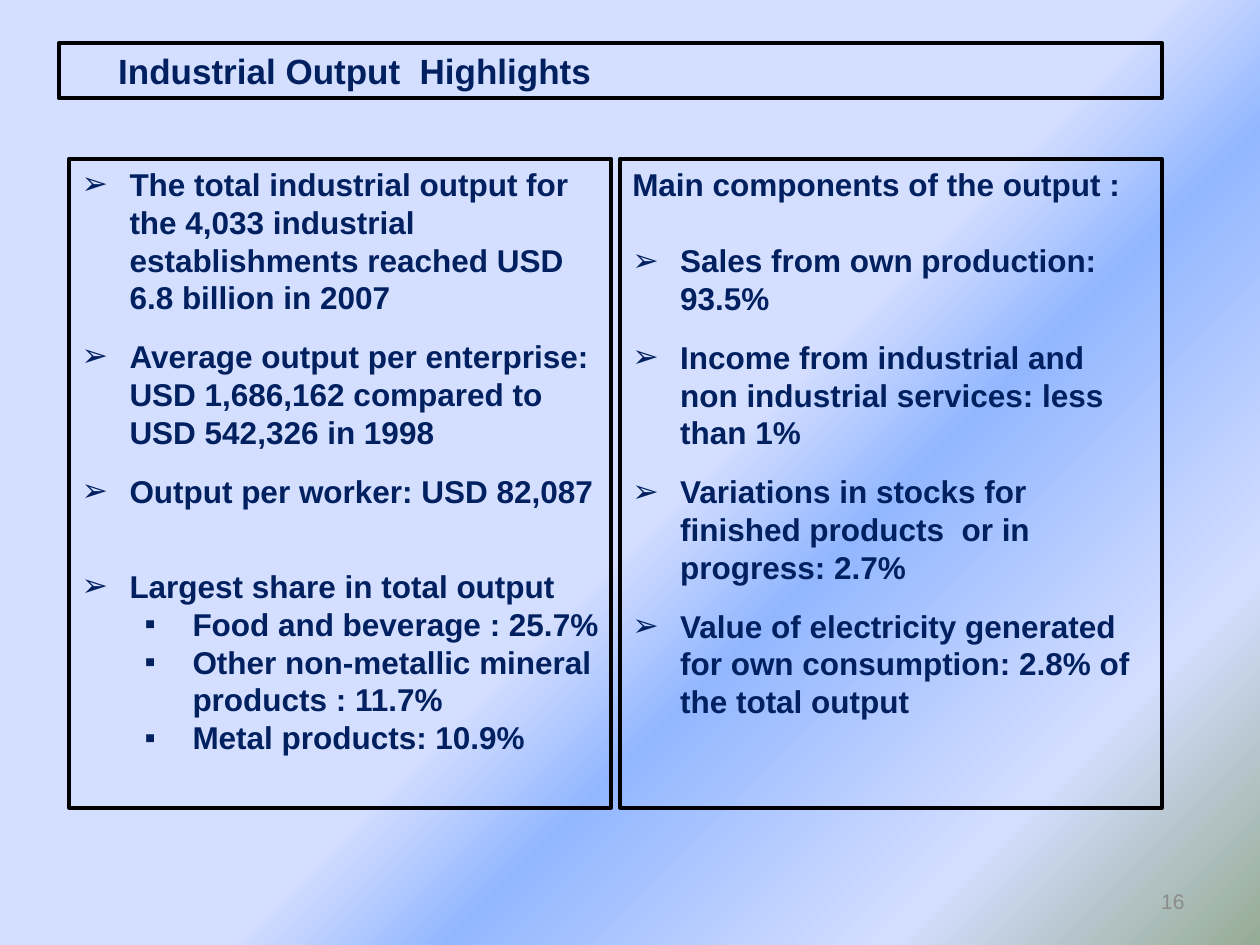
"""Build the slide of industrial output highlights."""
from copy import deepcopy
from dataclasses import dataclass

from lxml.etree import SubElement
from pptx import Presentation as Deck
from pptx.dml.color import RGBColor as Color
from pptx.enum.shapes import MSO_SHAPE as Shape
from pptx.enum.text import MSO_ANCHOR as Anchor, PP_ALIGN as Align
from pptx.oxml.ns import qn
from pptx.util import Inches, Pt


@dataclass(frozen=True)
class Theme:
    font: str = "Arial"
    navy: str = "002060"
    black: str = "000000"
    gray: str = "8C8C8C"
    title: int = 20
    body: int = 18
    small: int = 12
    edge: float = 2.25
    stops: tuple = ((53, "D4DEFF"), (63, "93B7FF"), (83, "D4DEFF"), (100, "96AB94"))


@dataclass(frozen=True)
class Line:
    text: str
    bullet: str = "➢"
    after: int = 12
    left: float = 0.38
    hang: float = 0.38
    level: int = 0


@dataclass(frozen=True)
class Box:
    left: float
    top: float
    width: float
    height: float
    size: int
    lines: tuple


THEME = Theme()


def sub(text: str) -> Line:
    return Line(text, "▪", 0, 0.88, level=1)


TITLE = Line("Industrial Output  Highlights", "", 0, 0.76, 0.39)
FACTS = (
    Line("The total industrial output for the 4,033 industrial establishments "
         "reached USD 6.8 billion in 2007"),
    Line("Average output per enterprise: USD 1,686,162 compared to  USD 542,326 in 1998"),
    Line("Output per worker: USD 82,087", after=33),
    Line("Largest share in total output", after=0),
    sub("Food and beverage : 25.7%"),
    sub("Other non-metallic mineral products : 11.7%"),
    sub("Metal products: 10.9%"),
)
PARTS = (
    Line("Main components of the output :", "", 22),
    Line("Sales from own production: 93.5%"),
    Line("Income from industrial and non industrial services: less than 1%"),
    Line("Variations in stocks for finished products  or in progress: 2.7%"),
    Line("Value of electricity generated for own consumption: 2.8% of the total output"),
)
BOXES = (
    Box(0.47, 0.34, 8.75, 0.44, THEME.title, (TITLE,)),
    Box(0.55, 1.26, 4.3, 5.15, THEME.body, FACTS),
    Box(4.92, 1.26, 4.3, 5.15, THEME.body, PARTS),
)


def style(para, size: int, color: str, bold: bool) -> None:
    for run in para.runs:
        font = run.font
        font.name, font.size, font.bold = THEME.font, Pt(size), bold
        font.color.rgb = Color.from_string(color)


def write(para, line: Line, size: int) -> None:
    para.text = line.text
    para.alignment = Align.LEFT
    para.level = line.level
    para.space_after = Pt(line.after)
    style(para, size, THEME.navy, True)
    props = para._p.get_or_add_pPr()
    props.set("marL", str(Inches(line.left)))
    props.set("indent", str(-Inches(line.hang)))
    if line.bullet:
        SubElement(props, qn("a:buFont")).set("typeface", THEME.font)
        SubElement(props, qn("a:buChar")).set("char", line.bullet)
    else:
        SubElement(props, qn("a:buNone"))


def draw(slide, box: Box) -> None:
    frame = slide.shapes.add_shape(
        Shape.RECTANGLE, Inches(box.left), Inches(box.top),
        Inches(box.width), Inches(box.height))
    frame.shadow.inherit = False
    frame.fill.background()
    frame.line.color.rgb = Color.from_string(THEME.black)
    frame.line.width = Pt(THEME.edge)
    text = frame.text_frame
    text.word_wrap = True
    text.vertical_anchor = Anchor.TOP
    for index, line in enumerate(box.lines):
        write(text.add_paragraph() if index else text.paragraphs[0], line, box.size)


def paint(slide) -> None:
    fill = slide.background.fill
    fill.gradient()
    fill.gradient_angle = 315
    first = fill.gradient_stops[0]._gs
    group = first.getparent()
    for _ in THEME.stops[2:]:
        group.append(deepcopy(first))
    for stop, (spot, color) in zip(fill.gradient_stops, THEME.stops):
        stop.position = spot / 100
        stop.color.rgb = Color.from_string(color)


def number(slide, text: str) -> None:
    frame = slide.shapes.add_textbox(
        Inches(7.17), Inches(6.95), Inches(2.33), Inches(0.4)).text_frame
    frame.word_wrap = True
    frame.vertical_anchor = Anchor.MIDDLE
    frame.text = text
    para = frame.paragraphs[0]
    para.alignment = Align.RIGHT
    style(para, THEME.small, THEME.gray, False)


def main() -> None:
    deck = Deck()
    deck.slide_width, deck.slide_height = Inches(10), Inches(7.5)
    slide = deck.slides.add_slide(deck.slide_layouts[6])
    paint(slide)
    number(slide, "16")
    for box in BOXES:
        draw(slide, box)
    deck.save("out.pptx")


if __name__ == "__main__":
    main()
